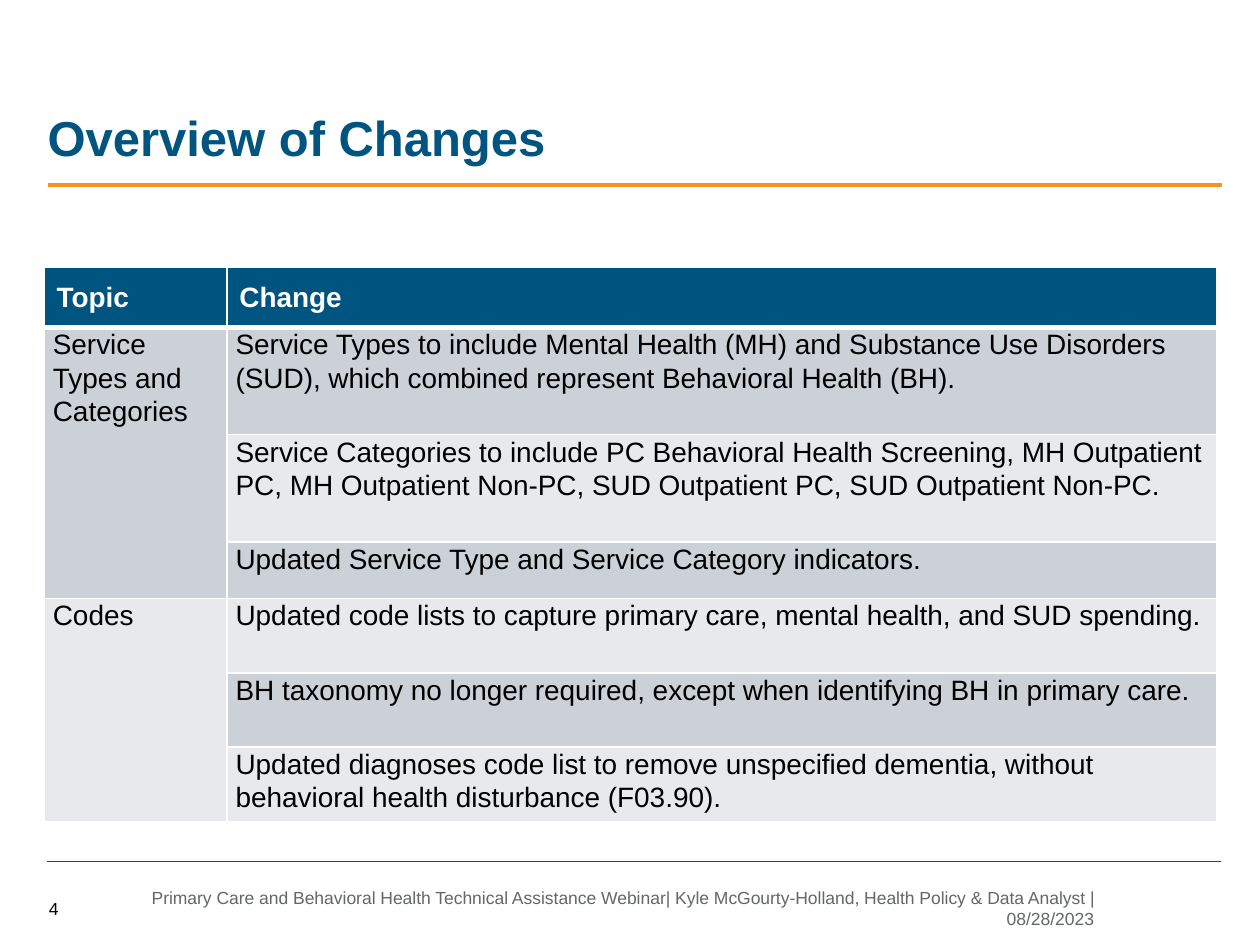
"""Build the "Overview of Changes" slide on a grid of 100 columns by 75 rows."""
from dataclasses import dataclass

import pptx
import pptx.dml.color
import pptx.enum.shapes
import pptx.enum.text
import pptx.oxml.ns
import pptx.shapes.autoshape
import pptx.slide
import pptx.table
import pptx.util
from lxml import etree

ANCHOR = pptx.enum.text.MSO_ANCHOR
ALIGN = pptx.enum.text.PP_ALIGN
COLUMNS, ROWS = 100, 75
WIDTH, HEIGHT = pptx.util.Inches(10), pptx.util.Inches(7.5)


@dataclass(frozen=True)
class Theme:
    font: str = "Arial"
    blue: str = "005480"
    orange: str = "F7921E"
    gray: str = "63666A"
    black: str = "000000"
    white: str = "FFFFFF"
    bands: tuple[str, str] = ("CCD1D8", "E7E9ED")
    title_size: float = 28
    table_size: float = 16
    footer_size: float = 10
    cell_spacing: float = 1.07
    border: float = 1
    header_border: float = 3


@dataclass(frozen=True)
class Label:
    text: str
    column: float
    row: float
    columns: float
    rows: float
    size: float
    color: str
    bold: bool = False
    anchor: ANCHOR = ANCHOR.MIDDLE
    align: ALIGN = ALIGN.LEFT


@dataclass(frozen=True)
class Rule:
    column: float
    row: float
    columns: float
    color: str
    weight: float


@dataclass(frozen=True)
class Change:
    text: str
    rows: float


@dataclass(frozen=True)
class Topic:
    name: str
    changes: tuple[Change, ...]


THEME = Theme()

LABELS = (
    Label("Overview of Changes", 2.8, 8, 87.8, 5.7, THEME.title_size, THEME.blue,
          bold=True, anchor=ANCHOR.BOTTOM),
    Label("4", 2.9, 70.1, 5.8, 4, THEME.footer_size, THEME.black),
    Label("Primary Care and Behavioral Health Technical Assistance Webinar| "
          "Kyle McGourty-Holland, Health Policy & Data Analyst | 08/28/2023",
          8.7, 70.1, 79.1, 4, THEME.footer_size, THEME.gray, align=ALIGN.RIGHT),
)

RULES = (
    Rule(3.7, 68.4, 93.2, THEME.blue, 0.75),
    Rule(3.8, 14.7, 93.2, THEME.orange, 2.25),
)

HEADINGS = ("Topic", "Change")
HEADER_ROWS = 4.8
TABLE_COLUMNS = (14.5, 78.6)
TOPICS = (
    Topic("Service Types and Categories", (
        Change("Service Types to include Mental Health (MH) and Substance Use Disorders "
               "(SUD), which combined represent Behavioral Health (BH).", 8.5),
        Change("Service Categories to include PC Behavioral Health Screening, MH Outpatient "
               "PC, MH Outpatient Non-PC, SUD Outpatient PC, SUD Outpatient Non-PC.", 8.5),
        Change("Updated Service Type and Service Category indicators.", 4.5),
    )),
    Topic("Codes", (
        Change("Updated code lists to capture primary care, mental health, "
               "and SUD spending.", 5.9),
        Change("BH taxonomy no longer required, except when identifying BH "
               "in primary care.", 5.9),
        Change("Updated diagnoses code list to remove unspecified dementia, without "
               "behavioral health disturbance (F03.90).", 5.9),
    )),
)


def across(columns: float) -> int:
    """Turn grid columns into a length."""
    return round(WIDTH * columns / COLUMNS)


def down(rows: float) -> int:
    """Turn grid rows into a length."""
    return round(HEIGHT * rows / ROWS)


def rgb(color: str) -> pptx.dml.color.RGBColor:
    """Turn a hex string into a colour."""
    return pptx.dml.color.RGBColor.from_string(color)


def write(frame, text: str, size: float, color: str, bold: bool):
    """Write one styled paragraph and return it."""
    paragraph = frame.paragraphs[0]
    paragraph.text = text
    font = paragraph.font
    font.name, font.size, font.bold = THEME.font, pptx.util.Pt(size), bold
    font.color.rgb = rgb(color)
    return paragraph


def draw_label(slide: pptx.slide.Slide, label: Label) -> None:
    """Draw a wrapped text box."""
    frame = slide.shapes.add_textbox(across(label.column), down(label.row),
                                     across(label.columns), down(label.rows)).text_frame
    frame.word_wrap = True
    frame.vertical_anchor = label.anchor
    write(frame, label.text, label.size, label.color, label.bold).alignment = label.align


def draw_rule(slide: pptx.slide.Slide, rule: Rule) -> None:
    """Draw a horizontal line without a shadow."""
    line = slide.shapes.add_connector(
        pptx.enum.shapes.MSO_CONNECTOR.STRAIGHT, across(rule.column), down(rule.row),
        across(rule.column + rule.columns), down(rule.row))
    line.line.color.rgb = rgb(rule.color)
    line.line.width = pptx.util.Pt(rule.weight)
    etree.SubElement(line._element.spPr, pptx.oxml.ns.qn("a:effectLst"))


def style_cell(cell: pptx.table._Cell, fill: str, top: float, bottom: float) -> None:
    """Give a cell white borders and a plain fill."""
    properties = cell._tc.get_or_add_tcPr()
    sides = {"L": THEME.border, "R": THEME.border, "T": top, "B": bottom}
    for side, weight in sides.items():
        edge = etree.SubElement(properties, pptx.oxml.ns.qn(f"a:ln{side}"),
                                w=str(pptx.util.Pt(weight)))
        paint = etree.SubElement(edge, pptx.oxml.ns.qn("a:solidFill"))
        etree.SubElement(paint, pptx.oxml.ns.qn("a:srgbClr"), val=THEME.white)
    cell.fill.solid()
    cell.fill.fore_color.rgb = rgb(fill)


def fill_body_cell(cell: pptx.table._Cell, text: str) -> None:
    """Write body text with narrow margins."""
    cell.margin_left = cell.margin_right = across(0.7)
    cell.margin_top = cell.margin_bottom = 0
    paragraph = write(cell.text_frame, text, THEME.table_size, THEME.black, False)
    paragraph.line_spacing = THEME.cell_spacing


def draw_table(slide: pptx.slide.Slide, topics: tuple[Topic, ...]) -> None:
    """Draw the topics, each spanning its banded changes."""
    heights = [HEADER_ROWS, *(change.rows for topic in topics for change in topic.changes)]
    table = slide.shapes.add_table(
        len(heights), len(HEADINGS), across(3.5), down(21.2),
        across(sum(TABLE_COLUMNS)), down(sum(heights))).table
    for column, columns in zip(table.columns, TABLE_COLUMNS):
        column.width = across(columns)
    for row, rows in zip(table.rows, heights):
        row.height = down(rows)

    for column, heading in enumerate(HEADINGS):
        cell = table.cell(0, column)
        style_cell(cell, THEME.blue, THEME.border, THEME.header_border)
        cell.vertical_anchor = ANCHOR.MIDDLE
        write(cell.text_frame, heading, THEME.table_size, THEME.white, True)

    first = 1
    for topic in topics:
        for row, change in enumerate(topic.changes, first):
            top = THEME.header_border if row == 1 else THEME.border
            for column, band_row in enumerate((first, row)):
                style_cell(table.cell(row, column), THEME.bands[(band_row - 1) % 2],
                           top, THEME.border)
            fill_body_cell(table.cell(row, 1), change.text)
        fill_body_cell(table.cell(first, 0), topic.name)
        last = first + len(topic.changes) - 1
        table.cell(first, 0).merge(table.cell(last, 0))
        first = last + 1


def main() -> None:
    """Build and save the slide."""
    deck = pptx.Presentation()
    deck.slide_width, deck.slide_height = WIDTH, HEIGHT
    slide = deck.slides.add_slide(deck.slide_layouts[6])
    draw_table(slide, TOPICS)
    for label in LABELS:
        draw_label(slide, label)
    for rule in RULES:
        draw_rule(slide, rule)
    deck.save("out.pptx")


if __name__ == "__main__":
    main()
